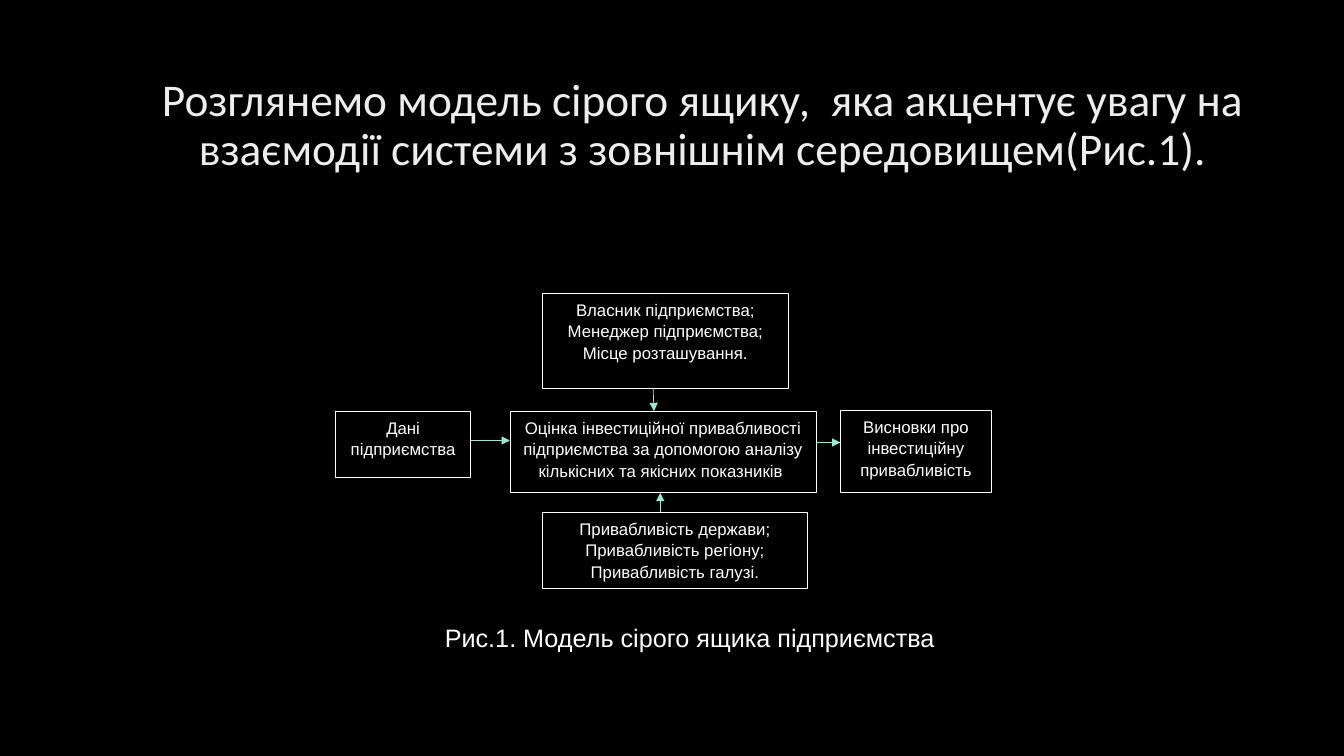
from dataclasses import dataclass

import pptx
import pptx.dml.color
import pptx.enum.shapes
import pptx.enum.text
import pptx.oxml
import pptx.oxml.ns
import pptx.shapes.shapetree
import pptx.slide
import pptx.text.text
import pptx.util
from pptx.util import Cm, Pt

BLACK = pptx.dml.color.RGBColor(0x00, 0x00, 0x00)
WHITE = pptx.dml.color.RGBColor(0xFF, 0xFF, 0xFF)
PALE_GREY = pptx.dml.color.RGBColor(0xED, 0xED, 0xED)
MINT = pptx.dml.color.RGBColor(0x97, 0xE9, 0xD5)
HAIRLINE = Pt(0.5)


@dataclass(frozen=True)
class Block:
    """A box of the model; places and sizes are in centimetres."""
    left: float
    top: float
    width: float
    height: float
    lines: tuple[str, ...]

    @property
    def right(self) -> float:
        return self.left + self.width

    @property
    def bottom(self) -> float:
        return self.top + self.height


@dataclass(frozen=True)
class Arrow:
    """An arrow between two points, in centimetres."""
    start: tuple[float, float]
    end: tuple[float, float]


ASSESSMENT = Block(12.85, 10.36, 7.72, 2.06, (
    "Оцінка інвестиційної привабливості підприємства за допомогою аналізу "
    "кількісних та якісних показників ",))
MANAGEMENT = Block(13.67, 7.39, 6.2, 2.39, (
    "Власник підприємства;", "Менеджер підприємства;", "Місце розташування."))
INPUT_DATA = Block(8.46, 10.36, 3.4, 1.68, ("Дані підприємства",))
CONCLUSIONS = Block(21.18, 10.34, 3.81, 2.08, (
    "Висновки про інвестиційну привабливість",))
ENVIRONMENT = Block(13.67, 12.9, 6.68, 1.93, (
    "Привабливість держави;", "Привабливість регіону;", "Привабливість галузі."))
BLOCKS = (ASSESSMENT, MANAGEMENT, INPUT_DATA, CONCLUSIONS, ENVIRONMENT)

ARROWS = (
    Arrow((INPUT_DATA.right, 11.1), (ASSESSMENT.left, 11.1)),
    Arrow((16.46, MANAGEMENT.bottom), (16.48, ASSESSMENT.top)),
    Arrow((ASSESSMENT.right, 11.15), (CONCLUSIONS.left, 11.15)),
    Arrow((16.64, ENVIRONMENT.top), (16.64, ASSESSMENT.bottom)),
)


def style_paragraph(paragraph: pptx.text.text._Paragraph, font_name: str, size: float,
                    color: pptx.dml.color.RGBColor, spacing: float) -> None:
    paragraph.alignment = pptx.enum.text.PP_ALIGN.CENTER
    paragraph.line_spacing = spacing
    paragraph.font.name = font_name
    paragraph.font.size = Pt(size)
    paragraph.font.color.rgb = color


def draw_title(slide: pptx.slide.Slide) -> None:
    frame = slide.shapes.add_textbox(Cm(3.1), Cm(2.36), Cm(29.21), Cm(3.68)).text_frame
    frame.word_wrap = True
    frame.vertical_anchor = pptx.enum.text.MSO_ANCHOR.MIDDLE
    frame.margin_bottom = Cm(2.15)
    frame.text = ("Розглянемо модель сірого ящику,  яка акцентує увагу на "
                  "взаємодії системи з зовнішнім середовищем(Рис.1).")
    style_paragraph(frame.paragraphs[0], "Calibri", 32.4, PALE_GREY, 0.9)


def draw_block(shapes: pptx.shapes.shapetree.GroupShapes, block: Block) -> None:
    box = shapes.add_shape(pptx.enum.shapes.MSO_SHAPE.RECTANGLE, Cm(block.left),
                           Cm(block.top), Cm(block.width), Cm(block.height))
    box.shadow.inherit = False
    box.fill.background()
    box.line.color.rgb = WHITE
    box.line.width = HAIRLINE
    frame = box.text_frame
    frame.word_wrap = True
    frame.vertical_anchor = pptx.enum.text.MSO_ANCHOR.TOP
    frame.text = "\n".join(block.lines)
    for paragraph in frame.paragraphs:
        style_paragraph(paragraph, "Arial", 12, WHITE, 1.07)


def draw_arrow(shapes: pptx.shapes.shapetree.GroupShapes, arrow: Arrow) -> None:
    connector = shapes.add_connector(
        pptx.enum.shapes.MSO_CONNECTOR.STRAIGHT,
        *(Cm(value) for value in arrow.start + arrow.end))
    connector.line.color.rgb = MINT
    connector.line.width = HAIRLINE
    head = pptx.oxml.parse_xml(
        f'<a:tailEnd {pptx.oxml.ns.nsdecls("a")} type="triangle"/>')
    connector.line._get_or_add_ln().append(head)
    connector._element.spPr.append(
        pptx.oxml.parse_xml(f'<a:effectLst {pptx.oxml.ns.nsdecls("a")}/>'))


def draw_caption(slide: pptx.slide.Slide) -> None:
    frame = slide.shapes.add_textbox(Cm(9.65), Cm(15.32), Cm(14.22), Cm(1.17)).text_frame
    frame.word_wrap = False
    frame.auto_size = pptx.enum.text.MSO_AUTO_SIZE.SHAPE_TO_FIT_TEXT
    frame.text = "Рис.1. Модель сірого ящика підприємства"
    caption = frame.paragraphs[0]
    caption._p.get_or_add_pPr().set("indent", str(Cm(1.25)))
    style_paragraph(caption, "Arial", 18, WHITE, 1.3)


def main() -> None:
    presentation = pptx.Presentation()
    presentation.slide_width = Cm(33.87)
    presentation.slide_height = Cm(19.05)
    slide = presentation.slides.add_slide(presentation.slide_layouts[6])
    slide.background.fill.solid()
    slide.background.fill.fore_color.rgb = BLACK

    draw_title(slide)
    model = slide.shapes.add_group_shape()
    for block in BLOCKS:
        draw_block(model.shapes, block)
    for arrow in ARROWS:
        draw_arrow(model.shapes, arrow)
    draw_caption(slide)
    presentation.save("out.pptx")


if __name__ == "__main__":
    main()
